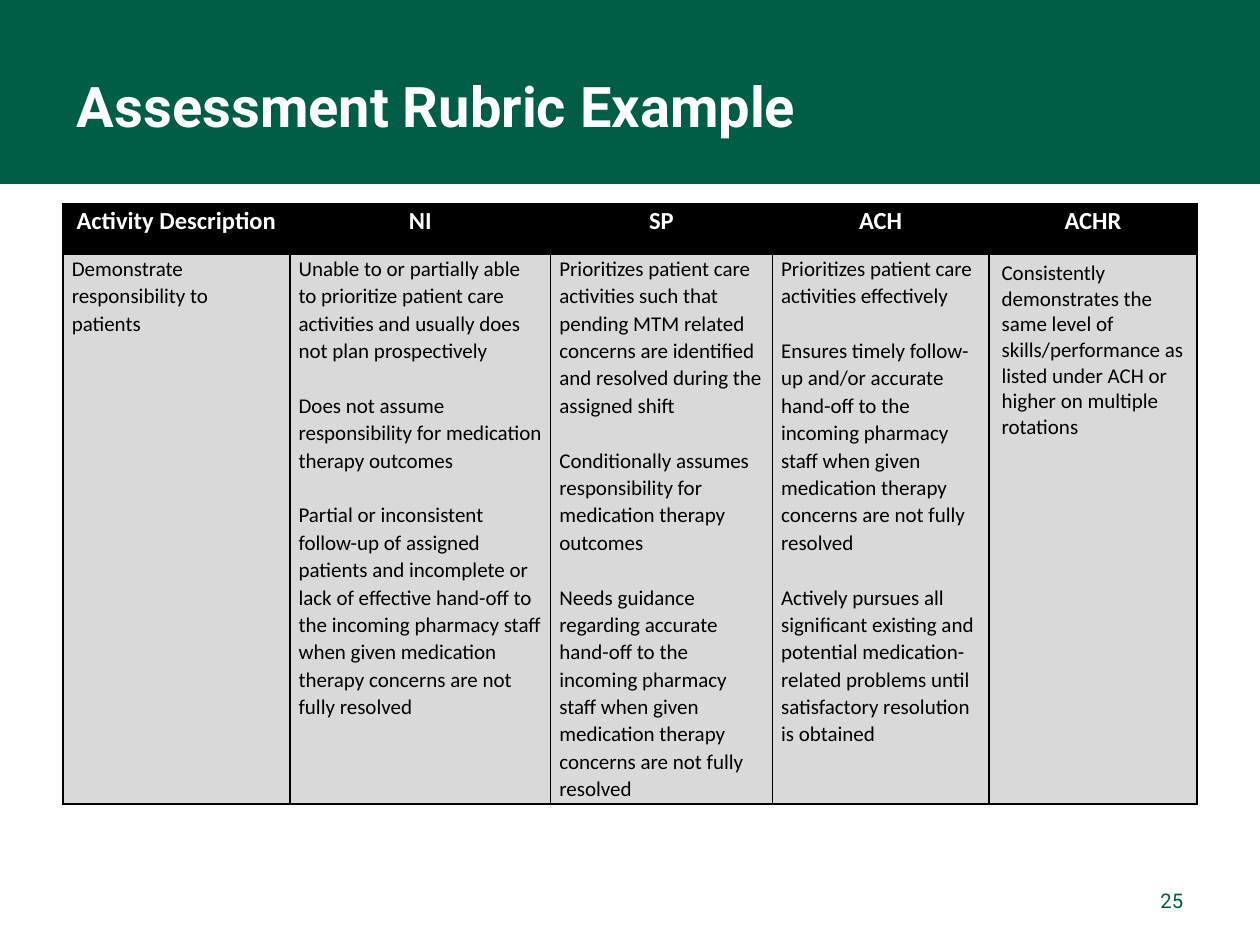
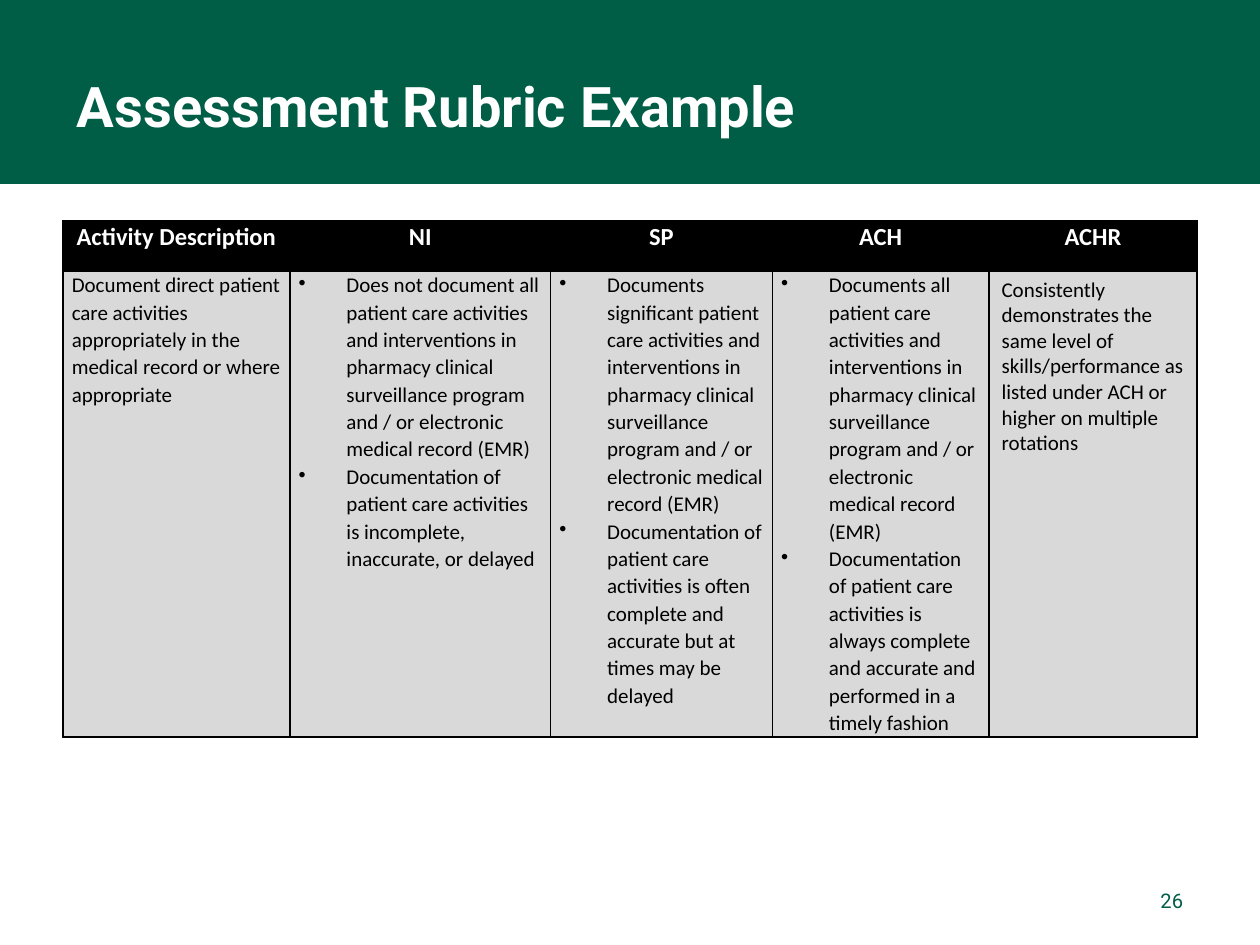
from lxml import etree
from pptx import Presentation
from pptx.dml.color import RGBColor
from pptx.enum.shapes import MSO_SHAPE
from pptx.enum.text import MSO_ANCHOR, MSO_AUTO_SIZE, PP_ALIGN
from pptx.oxml.ns import qn
from pptx.util import Inches, Pt

LEFT, CENTER, RIGHT = PP_ALIGN.LEFT, PP_ALIGN.CENTER, PP_ALIGN.RIGHT
MIDDLE, NO_AUTOFIT = MSO_ANCHOR.MIDDLE, MSO_AUTO_SIZE.NONE
RECTANGLE = MSO_SHAPE.RECTANGLE

GREEN, WHITE, BLACK, GREY = "005D46", "FFFFFF", "000000", "D9D9D9"
MARGIN = 0.5
BAND_HEIGHT = 1.46
BLANK_LINE = 15.7
COLUMNS = [1.8, 2.07, 1.76, 1.72, 1.65]
HEADER_HEIGHT = 0.4
HEADINGS = ["Activity Description", "NI", "SP", "ACH", "ACHR"]
ACHR_TEXT = ("Consistently demonstrates the same level of skills/performance as listed "
             "under ACH or higher on multiple rotations")
RECORDS = ("patient care activities and interventions in pharmacy clinical surveillance "
           "program and / or electronic medical record (EMR)")
HANDOFF = ("hand-off to the incoming pharmacy staff when given medication therapy "
           "concerns are not fully resolved")

rubrics = [
    {"page": 25, "top": 1.62, "height": 4.36, "bulleted": False, "levels": [
        ["Demonstrate responsibility to patients"],
        ["Unable to or partially able to prioritize patient care activities and usually "
         "does not plan prospectively",
         "Does not assume responsibility for medication therapy outcomes",
         "Partial or inconsistent follow-up of assigned patients and incomplete or lack "
         f"of effective {HANDOFF}"],
        ["Prioritizes patient care activities such that pending MTM related concerns are "
         "identified and resolved during the assigned shift",
         "Conditionally assumes responsibility for medication therapy outcomes",
         f"Needs guidance regarding accurate {HANDOFF}"],
        ["Prioritizes patient care activities effectively",
         f"Ensures timely follow-up and/or accurate {HANDOFF}",
         "Actively pursues all significant existing and potential medication-related "
         "problems until satisfactory resolution is obtained"],
        [ACHR_TEXT]]},
    {"page": 26, "top": 1.75, "height": 3.7, "bulleted": True, "levels": [
        ["Document direct patient care activities appropriately in the medical record or "
         "where appropriate"],
        [f"Does not document all {RECORDS}",
         "Documentation of patient care activities is incomplete, inaccurate, or delayed"],
        [f"Documents significant {RECORDS}",
         "Documentation of patient care activities is often complete and accurate but at "
         "times may be delayed"],
        [f"Documents all {RECORDS}",
         "Documentation of patient care activities is always complete and accurate and "
         "performed in a timely fashion"],
        [ACHR_TEXT]]},
]


def rgb(color):
    return RGBColor.from_string(color)


def write(frame, texts, font="Calibri", size=12, color=BLACK, bold=False, align=LEFT,
          spacing=1.0, gap=0, after=0, bulleted=False):
    """Fill a text frame with paragraphs; gap is the space before all but the first."""
    frame.word_wrap = True
    for index, text in enumerate(texts):
        paragraph = frame.add_paragraph() if index else frame.paragraphs[0]
        paragraph.text = text
        paragraph.alignment = align
        paragraph.line_spacing = spacing
        paragraph.space_before = Pt(gap if index else 0)
        paragraph.space_after = Pt(after)
        if bulleted:
            properties = paragraph._p.get_or_add_pPr()
            properties.set("marL", str(Inches(0.38)))
            properties.set("indent", str(-Inches(0.38)))
            etree.SubElement(properties, qn("a:buChar"), char="•")
        paragraph.font.name = font
        paragraph.font.size = Pt(size)
        paragraph.font.bold = bold
        paragraph.font.color.rgb = rgb(color)


prs = Presentation()
prs.slide_width, prs.slide_height = Inches(10), Inches(7.5)
content_width = prs.slide_width - 2 * Inches(MARGIN)

for rubric in rubrics:
    slide = prs.slides.add_slide(prs.slide_layouts[5])
    title = slide.shapes.title

    band = slide.shapes.add_shape(RECTANGLE, 0, 0, prs.slide_width, Inches(BAND_HEIGHT))
    band.shadow.inherit = False
    band.fill.solid()
    band.fill.fore_color.rgb = rgb(GREEN)
    band.line.fill.background()
    title.element.addprevious(band.element)  # keeps the band behind the title

    title.left, title.top = Inches(MARGIN), Inches(0.21)
    title.width, title.height = content_width, Inches(BAND_HEIGHT - 0.21)
    page_number = slide.shapes.add_textbox(Inches(7.17), Inches(6.95), Inches(2.33), Inches(0.4))
    for box in (title, page_number):
        frame = box.text_frame
        frame.auto_size = NO_AUTOFIT
        frame.vertical_anchor = MIDDLE
        frame.margin_left = frame.margin_right = Inches(0.11)
        frame.margin_top = frame.margin_bottom = Inches(0.06)
    write(title.text_frame, ["Assessment Rubric Example"], font="Roboto", size=32,
          color=WHITE, bold=True)
    write(page_number.text_frame, [str(rubric["page"])], font="Roboto", size=11.5,
          color=GREEN, align=RIGHT)

    table = slide.shapes.add_table(
        2, len(COLUMNS), Inches(MARGIN), Inches(rubric["top"]), content_width,
        Inches(HEADER_HEIGHT + rubric["height"])).table
    table.first_row = table.horz_banding = False
    table.rows[0].height = Inches(HEADER_HEIGHT)
    table.rows[1].height = Inches(rubric["height"])

    for column, width in enumerate(COLUMNS):
        table.columns[column].width = Inches(width)
        heading, level = table.cell(0, column), table.cell(1, column)
        is_achr = column == len(COLUMNS) - 1
        for cell, fill in ((heading, BLACK), (level, GREY)):
            cell.fill.solid()
            cell.fill.fore_color.rgb = rgb(fill)
            roomy = is_achr and cell is level
            cell.margin_left = cell.margin_right = Inches(0.1 if roomy else 0.07)
            cell.margin_top = cell.margin_bottom = Inches(0.05 if roomy else 0)
            for position, side in enumerate(("lnL", "lnR", "lnT", "lnB")):
                border = etree.Element(qn(f"a:{side}"), w=str(Pt(1)))
                border_fill = etree.SubElement(border, qn("a:solidFill"))
                etree.SubElement(border_fill, qn("a:srgbClr"), val=BLACK)
                cell._tc.get_or_add_tcPr().insert(position, border)

        write(heading.text_frame, [HEADINGS[column]], size=14, color=WHITE, bold=True,
              align=CENTER, spacing=1.07, after=8)
        write(level.text_frame, rubric["levels"][column],
              spacing=1.0 if is_achr else 1.07,
              gap=0 if rubric["bulleted"] else BLANK_LINE,
              bulleted=rubric["bulleted"] and 0 < column and not is_achr)

prs.save("out.pptx")
